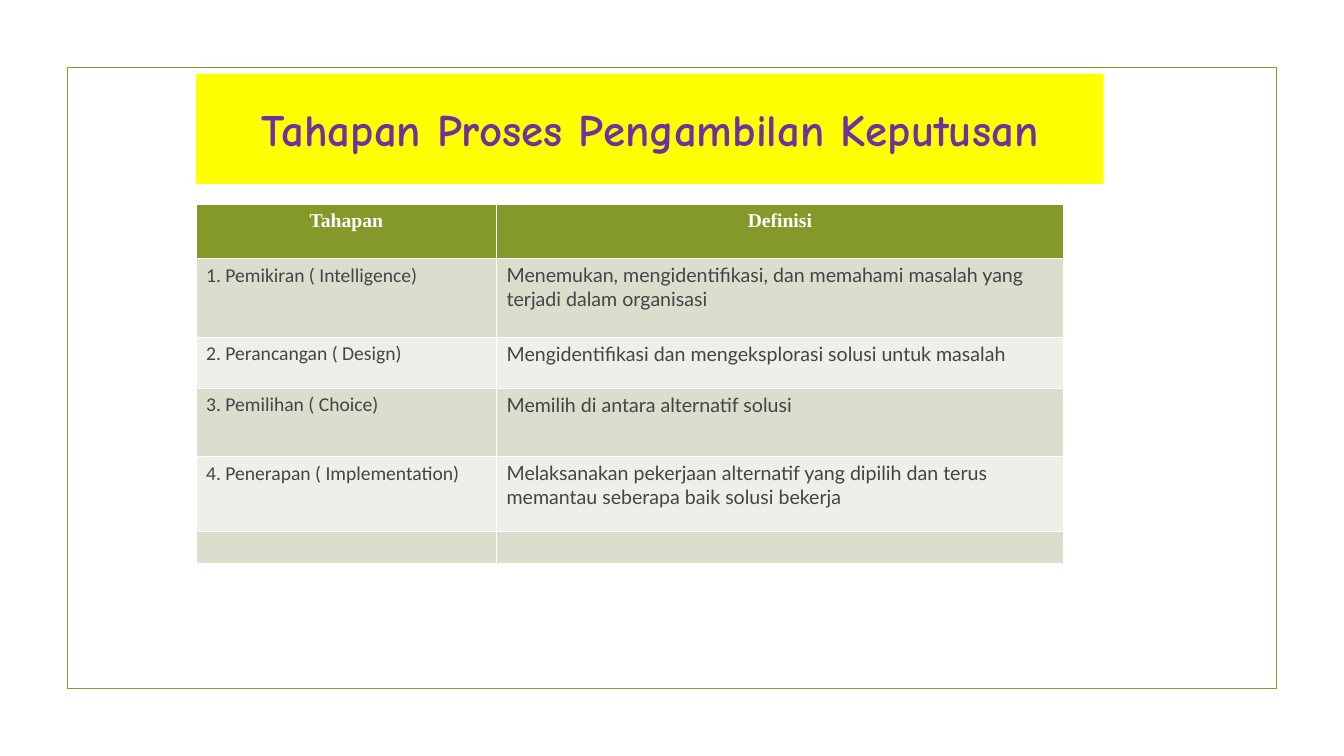
from lxml import etree
from pptx import Presentation
from pptx import util as u
from pptx.dml.color import RGBColor
from pptx.enum import shapes, text
from pptx.oxml import ns

PX = u.Inches(1) // 100
COLORS = {
    "accent": "83992A", "banner": "FFFF00", "title": "7030A0", "white": "FFFFFF",
    "body": "444444", "dark_band": "D9DECD", "light_band": "EDEFE8",
}
COLUMN_WIDTHS = [596, 1124]
ROW_HEIGHTS = [107, 156, 101, 136, 148, 63]
ROWS = [
    ("Tahapan", "Definisi"),
    ("1. Pemikiran ( Intelligence)",
     "Menemukan, mengidentifikasi, dan memahami masalah yang terjadi dalam organisasi"),
    ("2. Perancangan ( Design)", "Mengidentifikasi dan mengeksplorasi solusi untuk masalah"),
    ("3. Pemilihan ( Choice)", "Memilih di antara alternatif solusi"),
    ("4. Penerapan ( Implementation)",
     "Melaksanakan pekerjaan alternatif yang dipilih dan terus memantau seberapa baik solusi bekerja"),
    ("", ""),
]


def color(name):
    """Return the named palette colour."""
    return RGBColor.from_string(COLORS[name])


def scaled(*lengths):
    """Turn px lengths into EMU."""
    return [length * PX for length in lengths]


def paint(fill, name):
    """Fill an area with a solid palette colour."""
    fill.solid()
    fill.fore_color.rgb = color(name)


def style(paragraph, font_name, size, color_name, bold=False, centred=False):
    """Set the font and alignment of a paragraph."""
    paragraph.alignment = text.PP_ALIGN.CENTER if centred else text.PP_ALIGN.LEFT
    font = paragraph.font
    font.name, font.size, font.bold = font_name, u.Pt(size), bold
    font.color.rgb = color(color_name)


def add_title(slide, box):
    """Place the title placeholder as a filled banner."""
    title = slide.shapes.title
    title.left, title.top, title.width, title.height = scaled(*box)
    paint(title.fill, "banner")
    frame = title.text_frame
    frame.text = "Tahapan Proses Pengambilan Keputusan"
    frame.auto_size = text.MSO_AUTO_SIZE.NONE
    frame.vertical_anchor = text.MSO_ANCHOR.MIDDLE
    style(frame.paragraphs[0], "Comic Neue", 64, "title", bold=True, centred=True)


def add_page_frame(slide, box):
    """Draw the thin page outline behind the title."""
    outline = slide.shapes.add_shape(shapes.MSO_SHAPE.RECTANGLE, *scaled(*box))
    outline.shadow.inherit = False
    outline.fill.background()
    outline.line.color.rgb = color("accent")
    outline.line.width = u.Pt(1.25)
    slide.shapes.title.element.addprevious(outline.element)


def add_borders(cell, widths):
    """Give a cell white borders with the point width of each side."""
    properties = cell._tc.get_or_add_tcPr()
    for side, width in widths.items():
        line = etree.SubElement(properties, ns.qn(f"a:ln{side}"), w=str(u.Pt(width)))
        fill = etree.SubElement(line, ns.qn("a:solidFill"))
        etree.SubElement(fill, ns.qn("a:srgbClr"), val=COLORS["white"])


def fill_cell(cell, words, row, column):
    """Write and format one table cell."""
    header = row == 0
    cell.margin_left, cell.margin_right, cell.margin_top, cell.margin_bottom = scaled(20, 20, 10, 10)
    add_borders(cell, {"L": 1, "R": 1, "T": 3 if row == 1 else 1, "B": 3 if header else 1})
    paint(cell.fill, "accent" if header else "dark_band" if row % 2 else "light_band")
    if not words:
        return
    cell.text = words
    font_name = "Times New Roman" if header else ("Calibri", "Lato")[column]
    style(cell.text_frame.paragraphs[0], font_name, 28,
          "white" if header else "body", bold=header, centred=header)


def add_stage_table(slide, left, top):
    """Build the table of decision stages."""
    box = scaled(left, top, sum(COLUMN_WIDTHS), sum(ROW_HEIGHTS))
    table = slide.shapes.add_table(len(ROWS), len(COLUMN_WIDTHS), *box).table
    for column, width in zip(table.columns, COLUMN_WIDTHS):
        column.width = width * PX
    for row, (height, words) in enumerate(zip(ROW_HEIGHTS, ROWS)):
        table.rows[row].height = height * PX
        for column, entry in enumerate(words):
            fill_cell(table.cell(row, column), entry, row, column)


def main():
    """Build and save the slide."""
    presentation = Presentation()
    presentation.slide_width, presentation.slide_height = scaled(2666, 1500)
    slide = presentation.slides.add_slide(presentation.slide_layouts[5])
    add_title(slide, (389, 146, 1800, 219))
    add_page_frame(slide, (133, 133, 2399, 1233))
    add_stage_table(slide, 389, 406)
    presentation.save("out.pptx")


if __name__ == "__main__":
    main()
